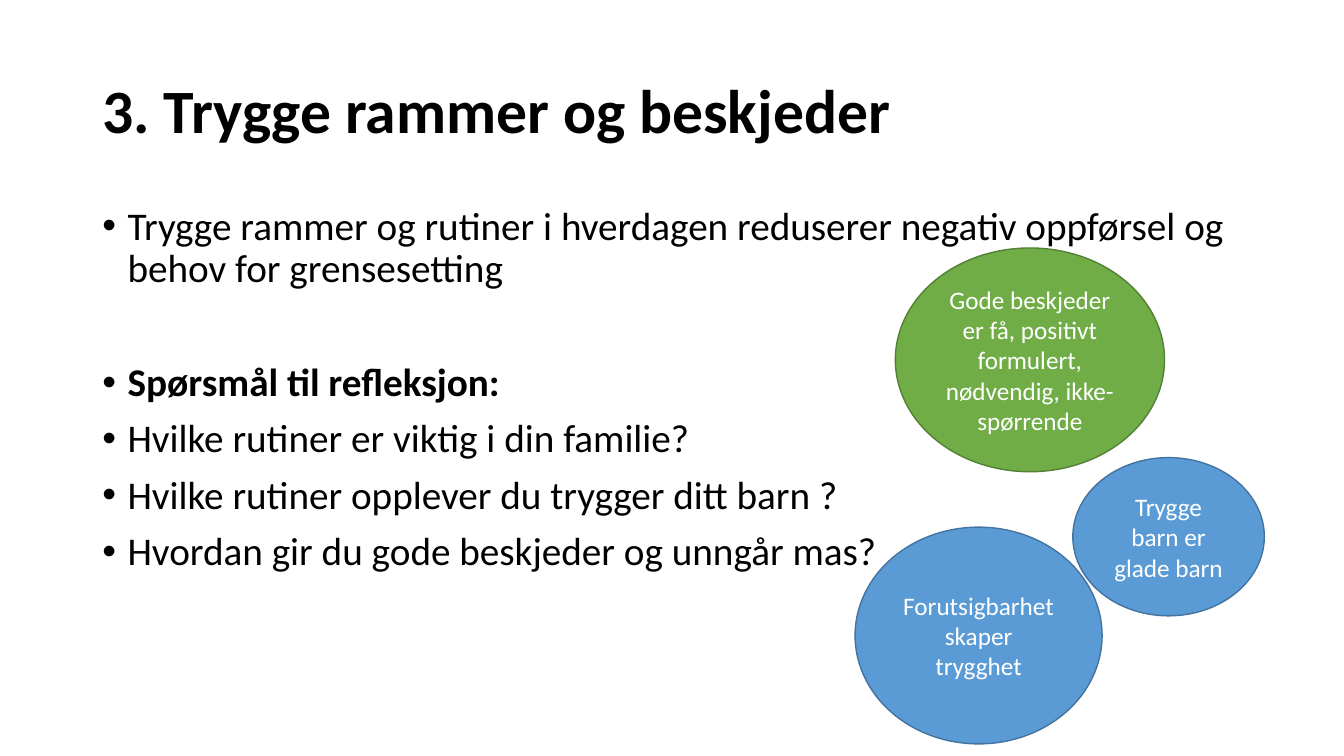
from dataclasses import dataclass

import pptx
import pptx.dml.color
import pptx.enum.shapes
import pptx.enum.text
import pptx.util
from lxml import etree

RGBColor = pptx.dml.color.RGBColor
BLACK = RGBColor(0x00, 0x00, 0x00)
WHITE = RGBColor(0xFF, 0xFF, 0xFF)
BLUE = RGBColor(0x5B, 0x9B, 0xD5)
DARK_BLUE = RGBColor(0x43, 0x73, 0x9E)
GREEN = RGBColor(0x70, 0xAD, 0x47)
DARK_GREEN = RGBColor(0x53, 0x80, 0x35)

FONT = "Calibri"
WIDTH = pptx.util.Inches(13.33)
HEIGHT = pptx.util.Inches(7.5)
INDENT = pptx.util.Inches(0.25)
DRAWING_NS = "http://schemas.openxmlformats.org/drawingml/2006/main"


@dataclass(frozen=True)
class Box:
    left: float
    top: float
    width: float
    height: float

    def emu(self) -> tuple[int, int, int, int]:
        return (
            round(self.left / 100 * WIDTH),
            round(self.top / 100 * HEIGHT),
            round(self.width / 100 * WIDTH),
            round(self.height / 100 * HEIGHT),
        )


@dataclass(frozen=True)
class Bullet:
    text: str
    bold: bool = False
    space_before: int = 10


@dataclass(frozen=True)
class Bubble:
    text: str
    box: Box
    fill: RGBColor
    line: RGBColor


TITLE = "3. Trygge rammer og beskjeder"
TITLE_BOX = Box(6.88, 5.33, 86.25, 19.33)
BODY_BOX = Box(6.88, 26.67, 86.25, 63.47)

BULLETS = [
    Bullet("Trygge rammer og rutiner i hverdagen reduserer negativ oppførsel og behov for grensesetting"),
    Bullet("Spørsmål til refleksjon:", bold=True, space_before=51),
    Bullet("Hvilke rutiner er viktig i din familie?"),
    Bullet("Hvilke rutiner opplever du trygger ditt barn ?"),
    Bullet("Hvordan gir du gode beskjeder og unngår mas?"),
]

BUBBLES = [
    Bubble("Trygge barn er glade barn", Box(79.82, 60.53, 14.25, 20.93), BLUE, DARK_BLUE),
    Bubble(
        "Gode beskjeder er få, positivt formulert, nødvendig, ikke-spørrende",
        Box(66.62, 32.8, 20.03, 29.6), GREEN, DARK_GREEN,
    ),
    Bubble("Forutsigbarhet skaper trygghet", Box(63.62, 69.73, 18.38, 28.67), BLUE, DARK_BLUE),
]


def set_font(p, size: int, color: RGBColor, bold: bool = False) -> None:
    p.font.name = FONT
    p.font.size = pptx.util.Pt(size)
    p.font.bold = bold
    p.font.color.rgb = color


def add_text_frame(slide, box: Box, anchor):
    tf = slide.shapes.add_textbox(*box.emu()).text_frame
    tf.word_wrap = True
    tf.vertical_anchor = anchor
    return tf


def add_title(slide) -> None:
    tf = add_text_frame(slide, TITLE_BOX, pptx.enum.text.MSO_ANCHOR.MIDDLE)
    p = tf.paragraphs[0]
    p.text = TITLE
    p.line_spacing = 0.9
    set_font(p, 44, BLACK, bold=True)


def add_bullets(slide, bullets: list[Bullet]) -> None:
    tf = add_text_frame(slide, BODY_BOX, pptx.enum.text.MSO_ANCHOR.TOP)
    for i, bullet in enumerate(bullets):
        p = tf.add_paragraph() if i else tf.paragraphs[0]
        p.text = bullet.text
        p.line_spacing = 0.9
        p.space_before = pptx.util.Pt(bullet.space_before)
        props = p._p.get_or_add_pPr()
        props.set("marL", str(INDENT))
        props.set("indent", str(-INDENT))
        etree.SubElement(props, f"{{{DRAWING_NS}}}buFont", typeface="Arial")
        etree.SubElement(props, f"{{{DRAWING_NS}}}buChar", char="•")
        set_font(p, 28, BLACK, bullet.bold)


def add_bubble(slide, bubble: Bubble) -> None:
    sp = slide.shapes.add_shape(pptx.enum.shapes.MSO_SHAPE.OVAL, *bubble.box.emu())
    sp.shadow.inherit = False
    sp.fill.solid()
    sp.fill.fore_color.rgb = bubble.fill
    sp.line.color.rgb = bubble.line
    sp.line.width = pptx.util.Pt(1)
    tf = sp.text_frame
    tf.word_wrap = True
    tf.vertical_anchor = pptx.enum.text.MSO_ANCHOR.MIDDLE
    p = tf.paragraphs[0]
    p.text = bubble.text
    p.alignment = pptx.enum.text.PP_ALIGN.CENTER
    set_font(p, 18, WHITE)


def main() -> None:
    prs = pptx.Presentation()
    prs.slide_width = WIDTH
    prs.slide_height = HEIGHT
    slide = prs.slides.add_slide(prs.slide_layouts[6])
    add_title(slide)
    add_bullets(slide, BULLETS)
    for bubble in BUBBLES:
        add_bubble(slide, bubble)
    prs.save("out.pptx")


if __name__ == "__main__":
    main()
